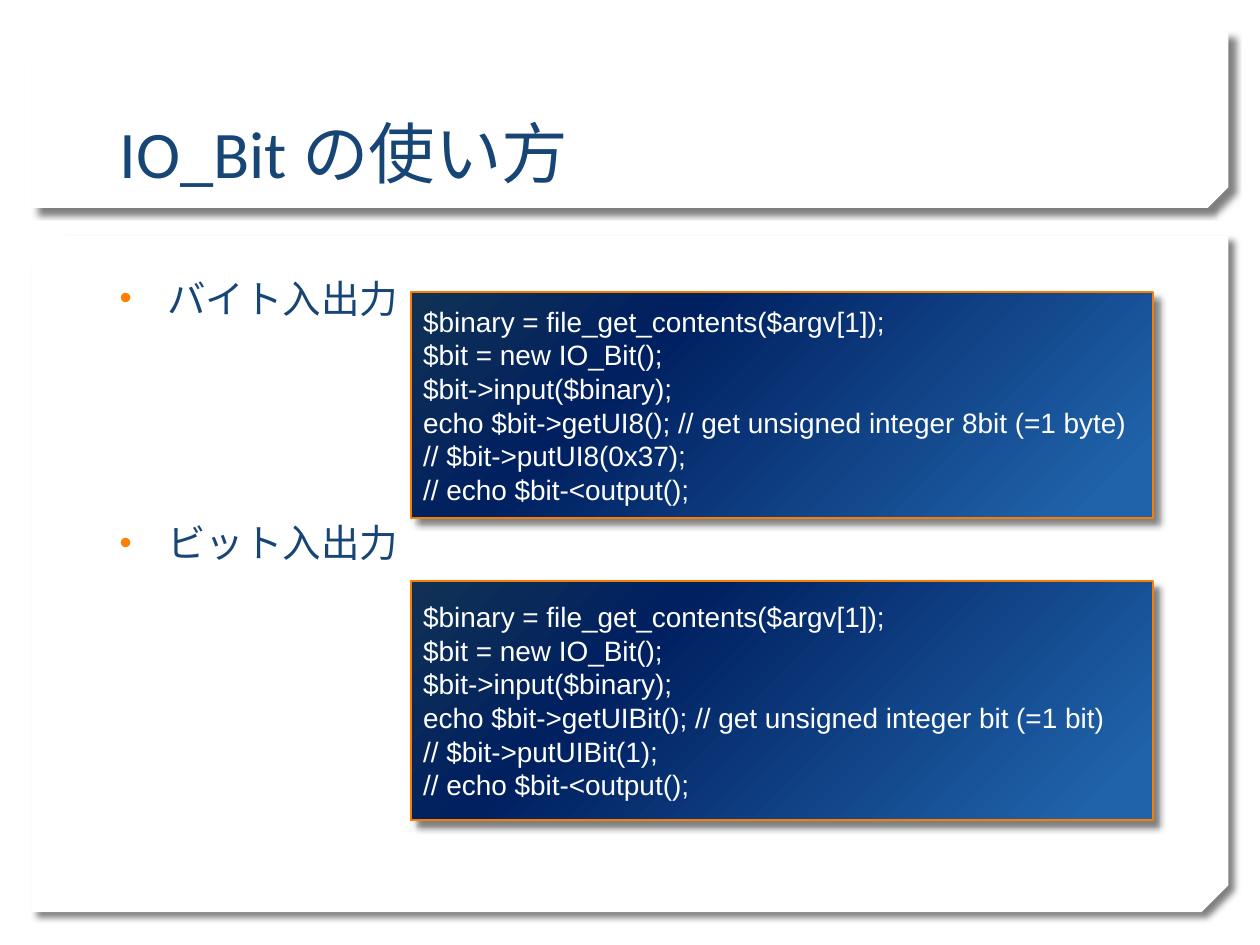
from lxml import etree
from pptx import Presentation
from pptx.dml.color import RGBColor
from pptx.enum import shapes, text
from pptx.oxml import ns
from pptx.util import Inches, Pt

# Content
TITLE = "IO_Bit の使い方"
TOPICS = ["バイト入出力", "ビット入出力"]
SETUP = ["$binary = file_get_contents($argv[1]);",
         "$bit = new IO_Bit();",
         "$bit->input($binary);"]
OUTPUT = "// echo $bit-<output();"
CODE_BOXES = [  # top, height, lines
    (2.32, 1.79, SETUP + [
        "echo $bit->getUI8(); // get unsigned integer 8bit (=1 byte)",
        "// $bit->putUI8(0x37);", OUTPUT]),
    (4.61, 1.9, SETUP + [
        "echo $bit->getUIBit(); // get unsigned integer bit (=1 bit)",
        "// $bit->putUIBit(1);", OUTPUT]),
]
PANELS = [(1.87, 5.37, 0.04), (0.25, 1.4, 0.117)]  # top, height, corner cut

WHITE = RGBColor(0xFF, 0xFF, 0xFF)
NAVY = RGBColor(0x17, 0x45, 0x76)
ORANGE = RGBColor(0xFA, 0x7C, 0x00)
BULLET = RGBColor(0xFF, 0x7F, 0x01)
SHADOW = RGBColor(0, 0, 0)
GRADIENT = [(0, RGBColor(0x10, 0x31, 0x54)), (30, RGBColor(0x00, 0x20, 0x60)),
            (93, RGBColor(0x20, 0x63, 0xAA)), (100, RGBColor(0x20, 0x63, 0xAA))]
DIAGONAL = 45 * 60000


def add_xml(parent, tag, **attributes):
    child = etree.SubElement(parent, ns.qn(tag))
    for name, value in attributes.items():
        child.set(name, str(value))
    return child


def add_shadow(shape):
    shape.shadow.inherit = False
    effects = shape._element.spPr.find(ns.qn("a:effectLst"))
    outer = add_xml(effects, "a:outerShdw", blurRad=Pt(4), dist=Pt(5),
                    dir=DIAGONAL, algn="tl", rotWithShape=0)
    color = add_xml(outer, "a:srgbClr", val=SHADOW)
    add_xml(color, "a:alpha", val=50000)


def add_gradient(shape):
    properties = shape._element.spPr
    fill = add_xml(properties, "a:gradFill", rotWithShape=1)
    stops = add_xml(fill, "a:gsLst")
    for percent, color in GRADIENT:
        stop = add_xml(stops, "a:gs", pos=percent * 1000)
        add_xml(stop, "a:srgbClr", val=color)
    add_xml(fill, "a:lin", ang=DIAGONAL, scaled=0)


def write(frame, lines, size, font, color, anchor):
    frame.word_wrap = True
    frame.vertical_anchor = anchor
    for index, line in enumerate(lines):
        paragraph = frame.add_paragraph() if index else frame.paragraphs[0]
        paragraph.alignment = text.PP_ALIGN.LEFT
        run = paragraph.add_run()
        run.text = line
        run.font.size = Pt(size)
        run.font.name = font
        run.font.color.rgb = color


def add_bullet(paragraph):
    properties = paragraph._p.get_or_add_pPr()
    properties.set("marL", str(Inches(0.38)))
    properties.set("indent", str(Inches(-0.38)))
    add_xml(add_xml(properties, "a:buClr"), "a:srgbClr", val=BULLET)
    add_xml(properties, "a:buSzPct", val=90000)
    add_xml(properties, "a:buFont", typeface="Arial")
    add_xml(properties, "a:buChar", char="•")


deck = Presentation()
deck.slide_width, deck.slide_height = Inches(10), Inches(7.5)
slide = deck.slides.add_slide(deck.slide_layouts[6])

# White panels with the lower right corner cut
for top, height, cut in PANELS:
    panel = slide.shapes.add_shape(
        shapes.MSO_SHAPE.SNIP_2_DIAG_RECTANGLE,
        Inches(0.25), Inches(top), Inches(9.5), Inches(height))
    panel.adjustments[0], panel.adjustments[1] = 0, cut
    panel._element.spPr.find(ns.qn("a:xfrm")).set("flipV", "1")
    panel.fill.solid()
    panel.fill.fore_color.rgb = WHITE
    panel.line.fill.background()
    add_shadow(panel)

# Title
title = slide.shapes.add_textbox(
    Inches(0.85), Inches(0.32), Inches(8.29), Inches(1.25))
write(title.text_frame, [TITLE], 38, "Calibri", NAVY, text.MSO_ANCHOR.BOTTOM)

# Topics, spaced to leave room for the code between them
topics = slide.shapes.add_textbox(
    Inches(0.85), Inches(2.13), Inches(8.29), Inches(4.38))
write(topics.text_frame, TOPICS, 22, "Calibri", NAVY, text.MSO_ANCHOR.TOP)
for index, paragraph in enumerate(topics.text_frame.paragraphs):
    paragraph.space_before = Pt(113.5 if index else 20)
    add_bullet(paragraph)

# Code boxes
for top, height, lines in CODE_BOXES:
    box = slide.shapes.add_shape(
        shapes.MSO_SHAPE.RECTANGLE,
        Inches(3.26), Inches(top), Inches(5.89), Inches(height))
    add_gradient(box)
    box.line.color.rgb = ORANGE
    box.line.width = Pt(1)
    add_shadow(box)
    write(box.text_frame, lines, 16, "Arial", WHITE, text.MSO_ANCHOR.MIDDLE)

deck.save("out.pptx")
